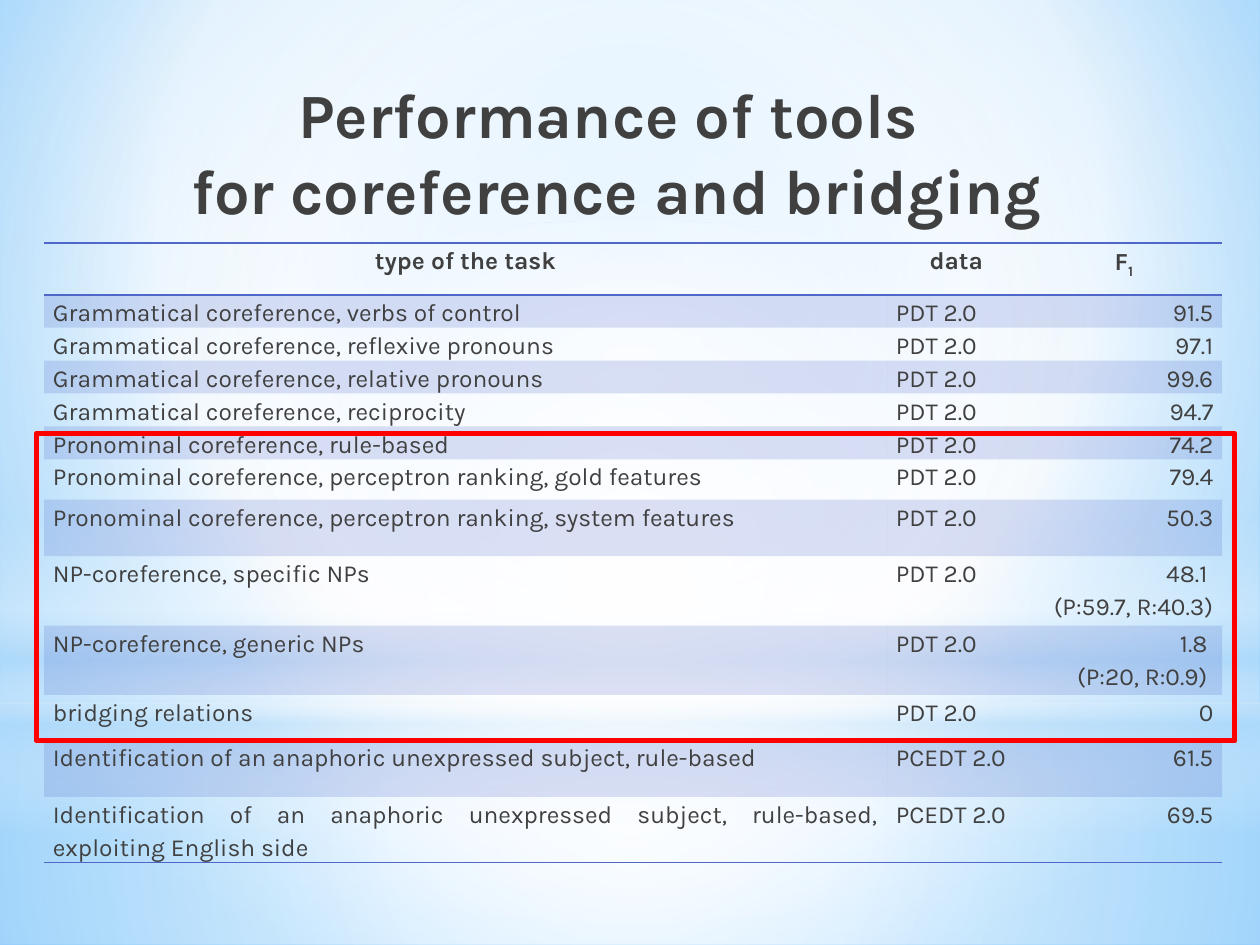
from lxml.etree import SubElement as Sub
from pptx import Presentation
from pptx.dml.color import RGBColor as RGB
from pptx.enum.shapes import MSO_SHAPE as Geo
from pptx.enum.text import MSO_ANCHOR as Anchor, PP_ALIGN as Align
from pptx.oxml.ns import qn
from pptx.util import Inches, Pt

HUE = {"text": "404040", "rule": "4E67C8", "mark": "FF0000", "white": "FFFFFF",
       "pale": "B4DCFA", "sky": "9ED5FF", "deep": "5BB9FF"}
FONT = "Karla"
PLAIN = "{2D5ABB26-0587-4C30-8999-92F81FD0307C}"
MID = (50, 50, 50, 50)

HEAD = ["type of the task", "data", "F"]
PDT, PCEDT = "PDT 2.0", "PCEDT 2.0"
ROWS = [
    ("Grammatical coreference, verbs of control", PDT, "91.5"),
    ("Grammatical coreference, reflexive pronouns", PDT, "97.1"),
    ("Grammatical coreference, relative pronouns", PDT, "99.6"),
    ("Grammatical coreference, reciprocity", PDT, "94.7"),
    ("Pronominal coreference, rule-based", PDT, "74.2"),
    ("Pronominal coreference, perceptron ranking, gold features", PDT, "79.4"),
    ("Pronominal coreference, perceptron ranking, system features", PDT, "50.3"),
    ("NP-coreference, specific NPs", PDT, "48.1 \n(P:59.7, R:40.3)"),
    ("NP-coreference, generic NPs", PDT, "1.8 \n(P:20, R:0.9) "),
    ("bridging relations", PDT, "0"),
    ("Identification of an anaphoric unexpressed subject, rule-based", PCEDT, "61.5"),
    ("Identification of an anaphoric unexpressed subject, rule-based, "
     "exploiting English side", PCEDT, "69.5"),
]
WIDTHS = [6.69, 1.1, 1.56]
HEIGHTS = [0.41] + [0.23] * 5 + [0.32, 0.45, 0.55, 0.55, 0.36, 0.45, 0.45]


def tint(node, hue, alpha=100):
    clr = Sub(node, qn("a:srgbClr"), val=HUE[hue])
    if alpha < 100:
        Sub(clr, qn("a:alpha"), val=str(alpha * 1000))


def blend(root, stops, focus=None):
    """Turn the first empty fill under root into a gradient, radial if focus is given."""
    node = root.find(".//" + qn("a:noFill"))
    node.tag = qn("a:gradFill")
    node.set("rotWithShape", "1")
    group = Sub(node, qn("a:gsLst"))
    for pos, hue, alpha in stops:
        tint(Sub(group, qn("a:gs"), pos=str(pos * 1000)), hue, alpha)
    if focus:
        way = Sub(node, qn("a:path"), path="circle")
        Sub(way, qn("a:fillToRect"),
            {side: str(val * 1000) for side, val in zip("ltrb", focus)})
    else:
        Sub(node, qn("a:lin"), ang="5400000", scaled="0")


class Deck:
    def __init__(self):
        self.prs = Presentation()
        self.prs.slide_width, self.prs.slide_height = Inches(10), Inches(7.5)
        self.slide = self.prs.slides.add_slide(self.prs.slide_layouts[6])

    def back(self, stops, focus):
        self.slide.background.fill.background()
        blend(self.slide._element, stops, focus)

    def shape(self, geo, box):
        item = self.slide.shapes.add_shape(geo, *map(Inches, box))
        item.shadow.inherit = False
        item.fill.background()
        return item

    def glow(self, geo, box, stops, focus=None):
        item = self.shape(geo, box)
        blend(item._element.spPr, stops, focus)
        item.line.fill.background()

    def frame(self, box):
        item = self.shape(Geo.RECTANGLE, box)
        item.line.color.rgb = RGB.from_string(HUE["mark"])
        item.line.width = Pt(3)

    def run(self, para, text, size, bold=False):
        run = para.add_run()
        run.text = text
        font = run.font
        font.name, font.size, font.bold = FONT, Pt(size), bold
        font.color.rgb = RGB.from_string(HUE["text"])
        return run

    def title(self, lines, box):
        frame = self.slide.shapes.add_textbox(*map(Inches, box)).text_frame
        frame.word_wrap = True
        frame.vertical_anchor = Anchor.TOP
        frame.margin_top = Inches(0.08)
        para = frame.paragraphs[0]
        para.alignment = Align.CENTER
        for num, line in enumerate(lines):
            if num:
                para.add_line_break()
            self.run(para, line, 36, True)

    def rule(self, cell, sides):
        for side in sides:
            line = Sub(cell._tc.get_or_add_tcPr(), qn("a:ln" + side), w=str(Pt(1)))
            tint(Sub(line, qn("a:solidFill")), "rule")

    def cell(self, cell, text, align, bold=False, band=False):
        cell.margin_left = cell.margin_right = Inches(0.07)
        cell.margin_top = cell.margin_bottom = 0
        frame = cell.text_frame
        for num, line in enumerate(text.split("\n")):
            para = frame.add_paragraph() if num else frame.paragraphs[0]
            para.alignment, para.line_spacing = align, 1.15
            self.run(para, line, 14, bold)
        if band:
            cell.fill.solid()
            cell.fill.fore_color.rgb = RGB.from_string(HUE["rule"])
            clr = cell._tc.tcPr.find(qn("a:solidFill"))[0]
            Sub(clr, qn("a:alpha"), val="20000")
        else:
            cell.fill.background()

    def table(self, box):
        grid = self.slide.shapes.add_table(
            len(HEIGHTS), len(WIDTHS), *map(Inches, box)).table
        grid.first_row = grid.horz_banding = False
        grid._tbl.tblPr.find(qn("a:tableStyleId")).text = PLAIN
        for col, width in zip(grid.columns, WIDTHS):
            col.width = Inches(width)
        for row, height in zip(grid.rows, HEIGHTS):
            row.height = Inches(height)
        for col, text in enumerate(HEAD):
            self.rule(grid.cell(0, col), "TB")
            self.cell(grid.cell(0, col), text, Align.CENTER, True)
        sub = self.run(grid.cell(0, 2).text_frame.paragraphs[0], "1", 14, True)
        sub.font._element.set("baseline", "-25000")
        aligns = [Align.JUSTIFY, Align.JUSTIFY, Align.RIGHT]
        for num, row in enumerate(ROWS, 1):
            for col, (text, align) in enumerate(zip(row, aligns)):
                cell = grid.cell(num, col)
                if num == len(ROWS):
                    self.rule(cell, "B")
                self.cell(cell, text, align, band=num % 2 == 1)


def main():
    deck = Deck()
    deck.back([(0, "sky", 100), (60, "white", 100), (100, "deep", 100)],
              (20, 10, 20, 60))
    deck.glow(Geo.RECTANGLE, (0, 5.58, 10, 1.92),
              [(0, "white", 91), (37, "white", 76), (100, "pale", 79)], MID)
    deck.glow(Geo.RECTANGLE, (0, 0, 10, 5.58),
              [(0, "white", 89), (48, "white", 62), (100, "pale", 79)], MID)
    deck.glow(Geo.RECTANGLE, (0, 4.12, 10, 2.5),
              [(0, "white", 0), (29, "white", 30), (45, "pale", 40),
               (55, "white", 26), (65, "pale", 60), (100, "white", 0)])
    deck.glow(Geo.OVAL, (0, 1.75, 10, 5.58),
              [(0, "white", 100), (56, "white", 0)], MID)
    deck.table((0.35, 1.93, 9.36, 4.97))
    deck.title(["Performance of tools ", "for coreference and bridging"],
               (0.52, 0.52, 8.74, 1.25))
    deck.frame((0.29, 3.44, 9.51, 2.44))
    deck.prs.save("out.pptx")


if __name__ == "__main__":
    main()
